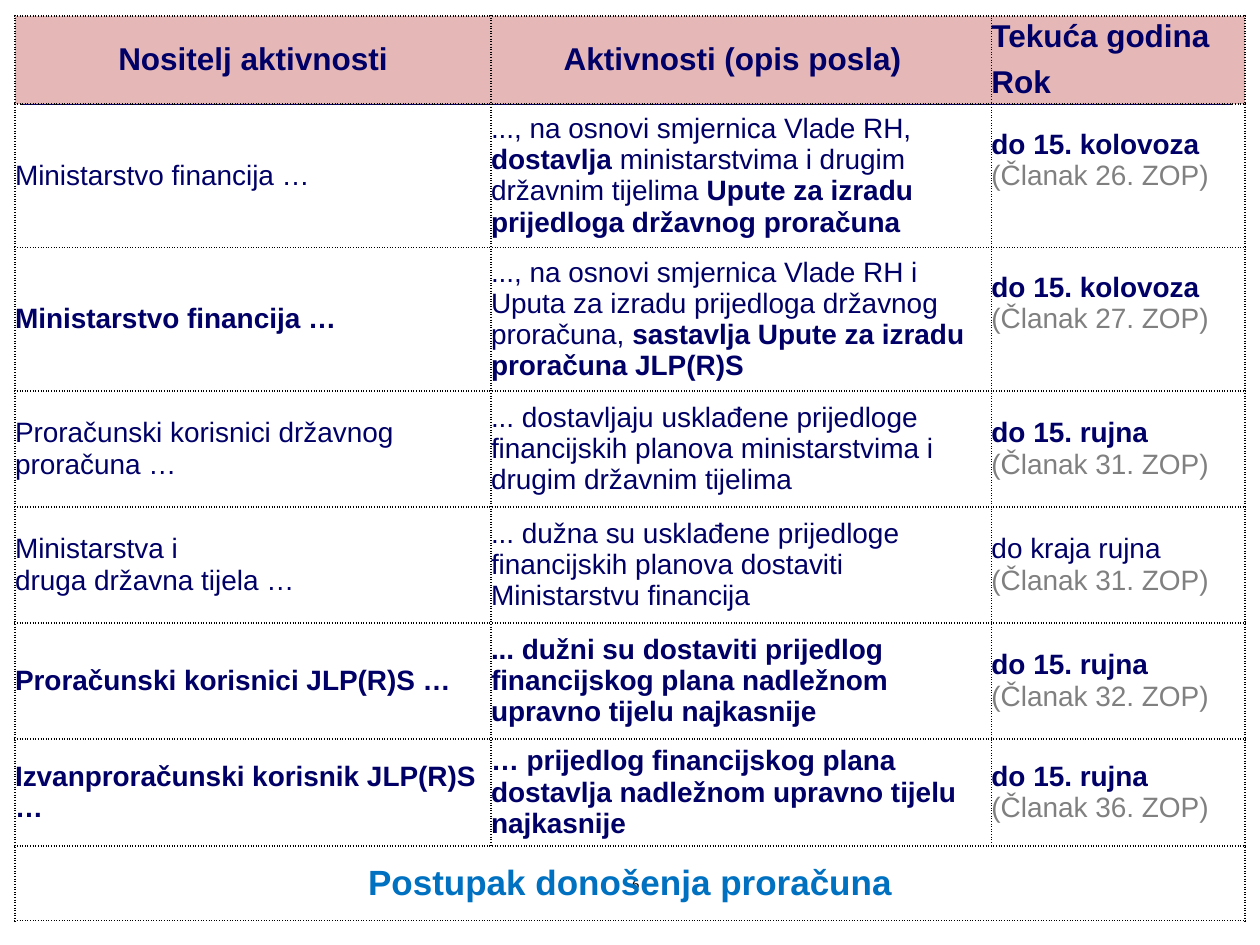
from lxml.etree import SubElement
from pptx import Presentation
from pptx.dml.color import RGBColor
from pptx.enum.shapes import MSO_CONNECTOR
from pptx.enum.text import MSO_ANCHOR, PP_ALIGN
from pptx.oxml import parse_xml
from pptx.oxml.ns import nsdecls, qn
from pptx.util import Pt

NAVY = RGBColor(0x00, 0x00, 0x66)
GREY = RGBColor(0x80, 0x80, 0x80)
BLUE = RGBColor(0x00, 0x70, 0xC0)
PINK = RGBColor(0xE5, 0xB8, 0xB7)
BLACK = RGBColor(0x00, 0x00, 0x00)

WIDTHS = [272, 286, 145]
HEIGHTS = [50.4, 82, 82, 66.3, 66.3, 66.3, 61.2, 42.5]
HEADS = ["Nositelj aktivnosti", "Aktivnosti (opis posla)", "Tekuća godina\nRok"]

# Asterisks enclose bold words; a line break starts a new paragraph.
ROWS = [
    ["Ministarstvo financija …",
     "..., na osnovi smjernica Vlade RH, *dostavlja* ministarstvima i drugim "
     "državnim tijelima *Upute za izradu prijedloga državnog proračuna*",
     "*do 15. kolovoza*\n(Članak 26. ZOP)"],
    ["*Ministarstvo financija …*",
     "..., na osnovi smjernica Vlade RH i Uputa za izradu prijedloga državnog "
     "proračuna,* sastavlja Upute za izradu proračuna JLP(R)S*",
     "*do 15. kolovoza*\n(Članak 27. ZOP)"],
    ["Proračunski korisnici državnog proračuna …",
     "... dostavljaju usklađene prijedloge financijskih planova "
     "ministarstvima i drugim državnim tijelima",
     "*do 15. rujna*\n(Članak 31. ZOP)"],
    ["Ministarstva i\ndruga državna tijela …",
     "... dužna su usklađene prijedloge financijskih planova dostaviti "
     "Ministarstvu financija",
     "do kraja rujna\n(Članak 31. ZOP)"],
    ["*Proračunski korisnici JLP(R)S …*",
     "*... dužni su dostaviti prijedlog financijskog plana nadležnom "
     "upravno tijelu najkasnije*",
     "*do 15. rujna*\n(Članak 32. ZOP)"],
    ["*Izvanproračunski korisnik JLP(R)S …*",
     "*… prijedlog financijskog plana dostavlja nadležnom upravno tijelu "
     "najkasnije*",
     "*do 15. rujna*\n(Članak 36. ZOP)"],
]


class Deck:
    """Holds the style and the current slide."""

    font = "Arial"

    def __init__(self, slide):
        self.slide = slide

    def rule(self, left, right, top):
        line = self.slide.shapes.add_connector(
            MSO_CONNECTOR.STRAIGHT, Pt(left), Pt(top), Pt(right), Pt(top))
        line.line.color.rgb = NAVY
        line.line.width = Pt(1)
        SubElement(line._element.spPr, qn("a:effectLst"))

    def label(self, text, left, top, width, height):
        frame = self.slide.shapes.add_textbox(
            Pt(left), Pt(top), Pt(width), Pt(height)).text_frame
        frame.margin_left = frame.margin_right = 0
        frame.margin_top = frame.margin_bottom = 0
        frame.word_wrap = False
        frame.vertical_anchor = MSO_ANCHOR.BOTTOM
        frame.text = text
        para = frame.paragraphs[0]
        para.alignment = PP_ALIGN.RIGHT
        self.style(para.runs[0].font, 8, BLACK, False, "Cabin")

    def table(self, left, top, widths, heights):
        grid = self.slide.shapes.add_table(
            len(heights), len(widths), Pt(left), Pt(top),
            Pt(sum(widths)), Pt(sum(heights))).table
        grid.first_row = grid.horz_banding = False
        for col, width in zip(grid.columns, widths):
            col.width = Pt(width)
        for row, height in zip(grid.rows, heights):
            row.height = Pt(height)
        for cell in grid.iter_cells():
            cell.fill.background()
            cell.vertical_anchor = MSO_ANCHOR.MIDDLE
            cell.margin_left = cell.margin_right = 0
            cell.margin_top = cell.margin_bottom = 0
            self.border(cell)
        return grid

    def border(self, cell):
        props = cell._tc.get_or_add_tcPr()
        for spot, side in enumerate("LRTB"):
            props.insert(spot, parse_xml(
                f'<a:ln{side} {nsdecls("a")} w="{Pt(1)}"><a:solidFill>'
                f'<a:srgbClr val="{BLACK}"/></a:solidFill>'
                f'<a:prstDash val="sysDot"/></a:ln{side}>'))

    def fill_in(self, cell, text, size=16, color=NAVY, align=PP_ALIGN.LEFT):
        frame = cell.text_frame
        frame.text = text.replace("*", "")
        for para, line in zip(frame.paragraphs, text.split("\n")):
            para.alignment = align
            para.text = ""
            tint = GREY if line.startswith("(") else color
            for spot, part in enumerate(line.split("*")):
                if part:
                    run = para.add_run()
                    run.text = part
                    self.style(run.font, size, tint, spot % 2 == 1)

    def style(self, font, size, color, bold, name=None):
        font.name = name or self.font
        font.size = Pt(size)
        font.color.rgb = color
        font.bold = bold


def main():
    show = Presentation()
    show.slide_width, show.slide_height = Pt(720), Pt(540)
    deck = Deck(show.slides.add_slide(show.slide_layouts[6]))
    deck.rule(11.5, 704, 59.4)
    deck.label("6", 355.5, 500, 10, 10)
    grid = deck.table(8.6, 9, WIDTHS, HEIGHTS)

    for col, head in enumerate(HEADS):
        cell = grid.cell(0, col)
        cell.fill.solid()
        cell.fill.fore_color.rgb = PINK
        bold = "\n".join(f"*{line}*" for line in head.split("\n"))
        deck.fill_in(cell, bold, 18,
                     align=PP_ALIGN.LEFT if col == 2 else PP_ALIGN.CENTER)
    grid.cell(0, 1).margin_right = Pt(10)
    grid.cell(0, 2).text_frame.paragraphs[0].space_after = Pt(6)

    for row, texts in enumerate(ROWS, 1):
        for col, text in enumerate(texts):
            deck.fill_in(grid.cell(row, col), text)
    for row in (1, 2):
        grid.cell(row, 2).margin_bottom = Pt(18)

    last = len(HEIGHTS) - 1
    foot = grid.cell(last, 0)
    foot.merge(grid.cell(last, 2))
    deck.fill_in(foot, "*Postupak donošenja proračuna*", 20, BLUE,
                 PP_ALIGN.CENTER)
    show.save("out.pptx")


if __name__ == "__main__":
    main()
